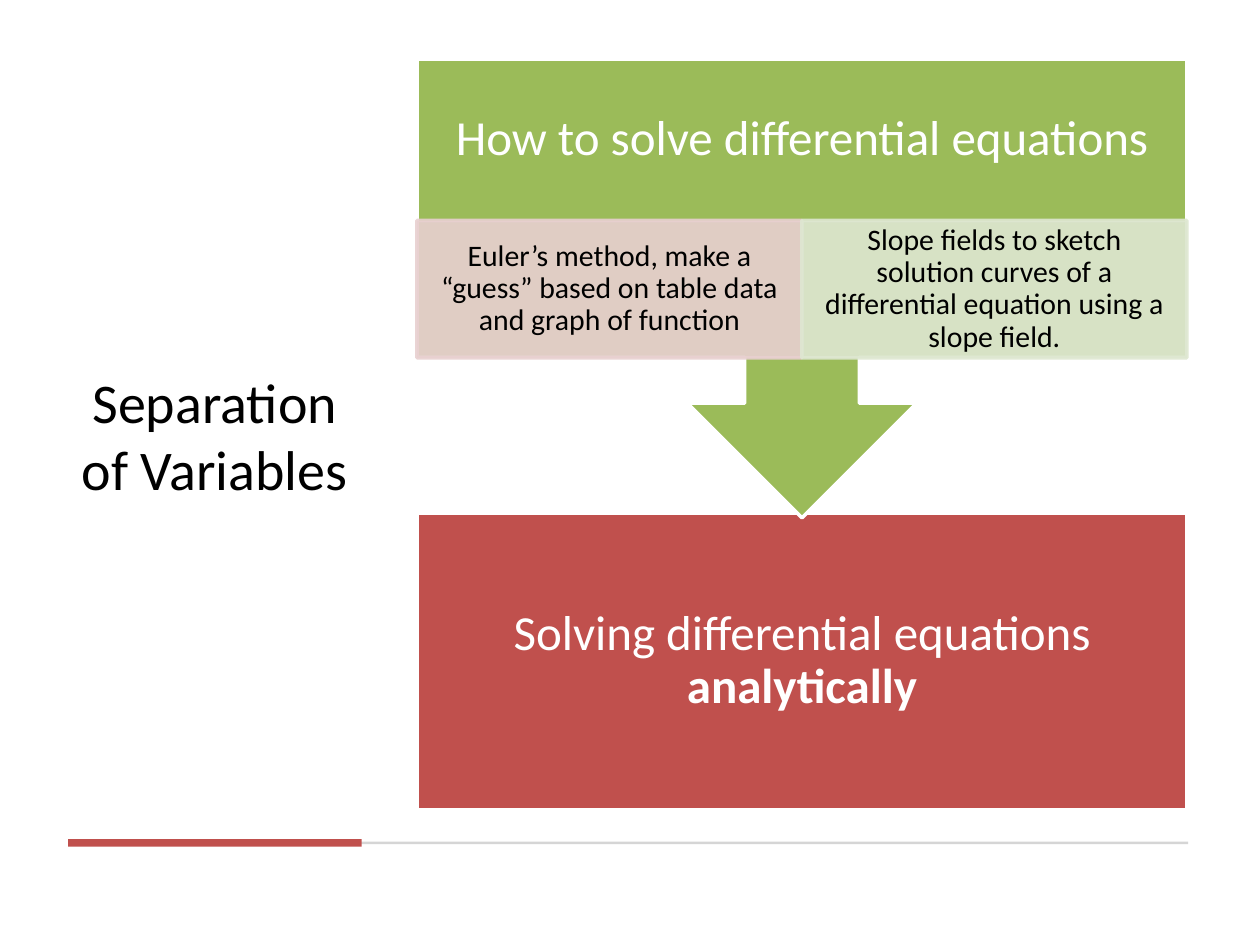
import pptx
import pptx.util
import pptx.dml.color
import pptx.enum.shapes
import pptx.enum.text
import pptx.oxml
import pptx.oxml.ns

Inches = pptx.util.Inches
Pt = pptx.util.Pt
SHAPES = pptx.enum.shapes.MSO_SHAPE

TITLE = [("Separation of Variables", False)]
HEADING = [("How to solve differential equations", False)]
METHODS = [
    ("Euler’s method, make a “guess” based on table data and graph of function", "rose"),
    ("Slope fields to sketch solution curves of a differential equation using a slope field.", "sage"),
]
CONCLUSION = [("Solving differential equations ", False), ("analytically", True)]

THEME = {
    "font": "Calibri",
    "sizes": {"title": 32, "heading": 28, "method": 17},
    "colors": {
        "black": "000000", "white": "FFFFFF", "red": "C0504D", "green": "9BBB59",
        "rose": "E8D0D0", "sage": "DEE7D1", "gray": "D5D5D5",
    },
}

LEFT, TOP, BOTTOM = 0.54, 0.47, 6.43
TITLE_WIDTH = 2.33
DIAGRAM_LEFT, DIAGRAM_WIDTH = 3.31, 6.11
CALLOUT_HEIGHT = 3.64
CONCLUSION_TOP = 4.07
METHOD_TOP, METHOD_HEIGHT = 1.75, 1.09
RULE_CENTER, RULE_WIDTH = 6.68, 8.89


def color(name):
    return pptx.dml.color.RGBColor.from_string(THEME["colors"][name])


def set_alpha(fill, percent):
    color_element = fill._xPr.find(pptx.oxml.ns.qn("a:solidFill"))[0]
    alpha = pptx.oxml.parse_xml(f'<a:alpha {pptx.oxml.ns.nsdecls("a")} val="{percent * 1000}"/>')
    color_element.append(alpha)


def add_block(slide, kind, box, fill, line=None, opacity=100):
    shape = slide.shapes.add_shape(kind, *map(Inches, box))
    shape.shadow.inherit = False
    shape.fill.solid()
    shape.fill.fore_color.rgb = color(fill)
    if line:
        shape.line.color.rgb = color(line)
        shape.line.width = Pt(2)
    else:
        shape.line.fill.background()
    if opacity < 100:
        set_alpha(shape.fill, opacity)
        set_alpha(shape.line.fill, opacity)
    return shape


def write_text(shape, runs, *, size, ink, insets=(0.1, 0.05, 0.1, 0.05), spacing=1.0):
    frame = shape.text_frame
    frame.word_wrap = True
    frame.vertical_anchor = pptx.enum.text.MSO_ANCHOR.MIDDLE
    frame.margin_left, frame.margin_top, frame.margin_right, frame.margin_bottom = map(Inches, insets)
    paragraph = frame.paragraphs[0]
    paragraph.alignment = pptx.enum.text.PP_ALIGN.CENTER
    paragraph.line_spacing = spacing
    for text, bold in runs:
        run = paragraph.add_run()
        run.text = text
        run.font.name = THEME["font"]
        run.font.size = Pt(THEME["sizes"][size])
        run.font.bold = bold
        run.font.color.rgb = color(ink)


def main():
    presentation = pptx.Presentation()
    presentation.slide_width, presentation.slide_height = Inches(10), Inches(7.5)
    slide = presentation.slides.add_slide(presentation.slide_layouts[6])

    title = slide.shapes.add_textbox(*map(Inches, (LEFT, TOP, TITLE_WIDTH, BOTTOM - TOP)))
    write_text(title, TITLE, size="title", ink="black")

    for width, height, fill in ((RULE_WIDTH, 0.02, "gray"), (TITLE_WIDTH, 0.06, "red")):
        add_block(slide, SHAPES.RECTANGLE, (LEFT, RULE_CENTER - height / 2 + 0.01, width, height), fill)

    conclusion = add_block(
        slide, SHAPES.RECTANGLE,
        (DIAGRAM_LEFT, CONCLUSION_TOP, DIAGRAM_WIDTH, BOTTOM - CONCLUSION_TOP), "red", "white")
    write_text(conclusion, CONCLUSION, size="heading", ink="white", insets=(0.22,) * 4, spacing=0.9)

    callout = add_block(
        slide, SHAPES.DOWN_ARROW_CALLOUT,
        (DIAGRAM_LEFT, TOP, DIAGRAM_WIDTH, CALLOUT_HEIGHT), "green", "white")
    for index, ratio in enumerate((0.25, 0.25, 0.25, 0.65)):
        callout.adjustments[index] = ratio
    write_text(callout, HEADING, size="heading", ink="white",
               insets=(0.22, 0.22, 0.22, 0.22 + METHOD_HEIGHT), spacing=0.9)

    method_width = DIAGRAM_WIDTH / len(METHODS)
    for index, (text, fill) in enumerate(METHODS):
        box = (DIAGRAM_LEFT + index * method_width, METHOD_TOP, method_width, METHOD_HEIGHT)
        method = add_block(slide, SHAPES.RECTANGLE, box, fill, fill, opacity=90)
        write_text(method, [(text, False)], size="method", ink="black",
                   insets=(0.13, 0.02, 0.13, 0.02), spacing=0.9)

    presentation.save("out.pptx")


if __name__ == "__main__":
    main()
